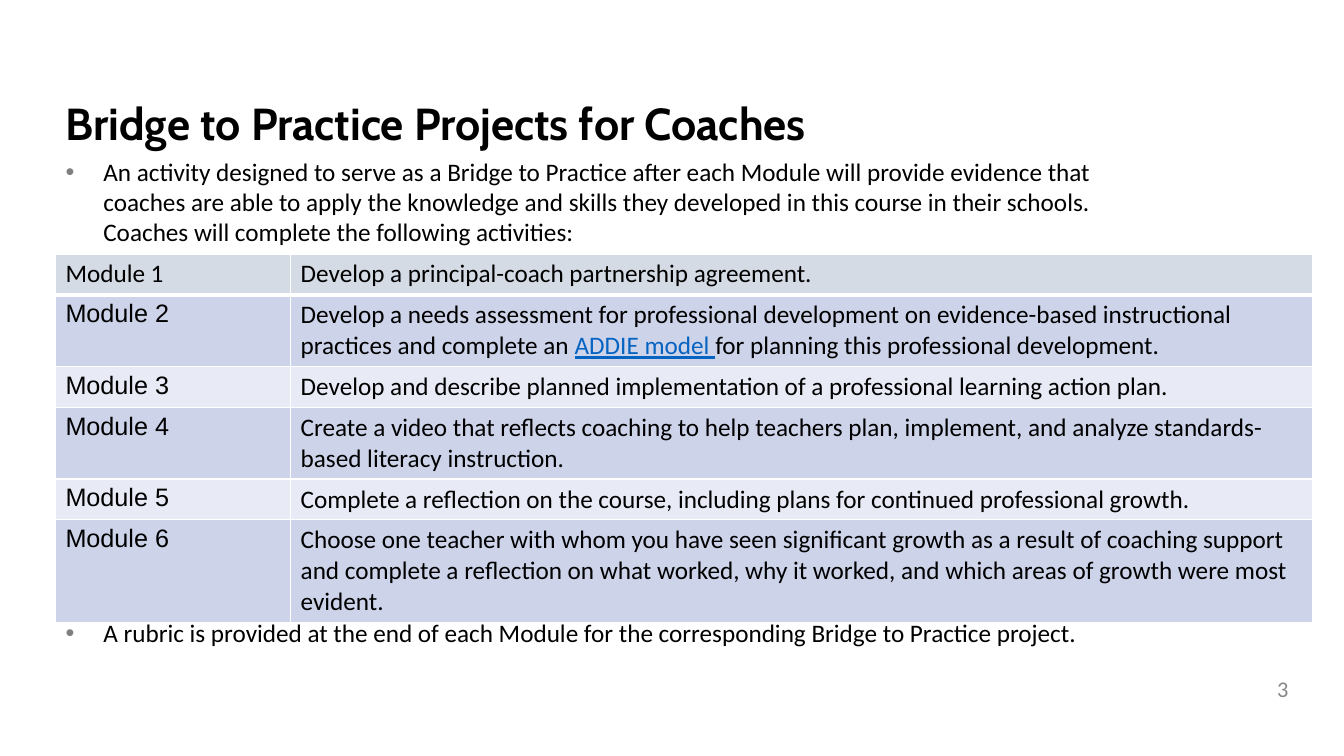
import pptx
import pptx.util
import pptx.dml.color
import pptx.enum.text
import pptx.oxml
import pptx.oxml.ns

Pt = pptx.util.Pt
RGB = pptx.dml.color.RGBColor
Align = pptx.enum.text.PP_ALIGN
Anchor = pptx.enum.text.MSO_ANCHOR
Fit = pptx.enum.text.MSO_AUTO_SIZE

BLACK = RGB(0x00, 0x00, 0x00)
WHITE = RGB(0xFF, 0xFF, 0xFF)
GREY = RGB(0x88, 0x88, 0x88)
DOT = RGB(0x7F, 0x7F, 0x7F)
LINK = RGB(0x05, 0x63, 0xC1)
HEAD = RGB(0xD5, 0xDB, 0xE5)
DARK = RGB(0xCD, 0xD4, 0xEA)
LIGHT = RGB(0xE8, 0xEB, 0xF5)

LEFT = 39.6
LINE = 21.95  # height of one 18 pt text line
PAD = 7.2     # top and bottom inset of a cell


class Deck:
    font = "Calibri"
    size = 18

    def __init__(self):
        self.prs = pptx.Presentation()
        self.prs.slide_width = Pt(960)
        self.prs.slide_height = Pt(540)
        self.slide = self.prs.slides.add_slide(self.prs.slide_layouts[1])

    def place(self, shape, x, y, w, h, anchor):
        shape.left, shape.top = Pt(x), Pt(y)
        shape.width, shape.height = Pt(w), Pt(h)
        frame = shape.text_frame
        frame.word_wrap = True
        frame.auto_size = Fit.NONE
        frame.vertical_anchor = anchor
        return frame

    def run(self, para, text, color=BLACK, size=None, font=None,
            bold=False, under=False):
        run = para.add_run()
        run.text = text
        face = run.font
        face.name = font or self.font
        face.size = Pt(size or self.size)
        face.color.rgb = color
        face.bold = bold
        face.underline = under

    def title(self, text, *box):
        frame = self.place(self.slide.shapes.title, *box, Anchor.MIDDLE)
        para = frame.paragraphs[0]
        para.alignment = Align.LEFT
        self.run(para, text, size=32, font="Cabin", bold=True)

    def bullet(self, para, indent):
        props = para._p.get_or_add_pPr()
        props.set("marL", str(Pt(indent)))
        props.set("indent", str(-Pt(indent)))
        ns = pptx.oxml.ns.nsdecls("a")
        for xml in (f'<a:buClr {ns}><a:srgbClr val="{DOT}"/></a:buClr>',
                    f'<a:buFont {ns} typeface="Arial"/>',
                    f'<a:buChar {ns} char="•"/>'):
            props.append(pptx.oxml.parse_xml(xml))

    def body(self, items, gap, *box):
        frame = self.place(self.slide.placeholders[1], *box, Anchor.TOP)
        for i, text in enumerate(items):
            para = frame.add_paragraph() if i else frame.paragraphs[0]
            self.bullet(para, 27)
            para.space_before = Pt(gap if i else 0)
            self.run(para, text)

    def number(self, text, *box):
        shape = self.slide.shapes.add_textbox(0, 0, 0, 0)
        para = self.place(shape, *box, Anchor.MIDDLE).paragraphs[0]
        para.alignment = Align.RIGHT
        self.run(para, text, GREY, size=16)

    def border(self, cell, **widths):
        props = cell._tc.get_or_add_tcPr()
        ns = pptx.oxml.ns.nsdecls("a")
        for side in "LRTB":
            props.append(pptx.oxml.parse_xml(
                f'<a:ln{side} {ns} w="{Pt(widths.get(side, 1))}"><a:solidFill>'
                f'<a:srgbClr val="{WHITE}"/></a:solidFill></a:ln{side}>'))

    def table(self, rows, widths, x, y):
        high = [PAD + lines * LINE for lines, _ in rows]
        grid = self.slide.shapes.add_table(
            len(rows), len(widths), Pt(x), Pt(y),
            Pt(sum(widths)), Pt(sum(high))).table
        for col, width in zip(grid.columns, widths):
            col.width = Pt(width)
        for i, (_, parts) in enumerate(rows):
            grid.rows[i].height = Pt(high[i])
            fill = (DARK if i % 2 else LIGHT) if i else HEAD
            edge = {0: {"B": 3}, 1: {"T": 3}}.get(i, {})
            for j in range(len(widths)):
                cell = grid.cell(i, j)
                self.border(cell, **edge)
                cell.fill.solid()
                cell.fill.fore_color.rgb = fill
            self.run(grid.cell(i, 0).text_frame.paragraphs[0],
                     f"Module {i + 1}", font="Arial" if i else None)
            para = grid.cell(i, 1).text_frame.paragraphs[0]
            for k, text in enumerate(parts):
                link = k == 1  # the middle part is styled as a link
                self.run(para, text, LINK if link else BLACK, under=link)


# Line count and text parts of each module
MODULES = [
    (1, ["Develop a principal-coach partnership agreement."]),
    (2, ["Develop a needs assessment for professional development on "
         "evidence-based instructional practices and complete an ",
         "ADDIE model ",
         "for planning this professional development."]),
    (1, ["Develop and describe planned implementation of a professional "
         "learning action plan."]),
    (2, ["Create a video that reflects coaching to help teachers plan, "
         "implement, and analyze standards-based literacy instruction."]),
    (1, ["Complete a reflection on the course, including plans for "
         "continued professional growth."]),
    (3, ["Choose one teacher with whom you have seen significant growth as a "
         "result of coaching support and complete a reflection on what "
         "worked, why it worked, and which areas of growth were most "
         "evident."]),
]

POINTS = [
    "An activity designed to serve as a Bridge to Practice after each Module "
    "will provide evidence that coaches are able to apply the knowledge and "
    "skills they developed in this course in their schools. Coaches will "
    "complete the following activities:",
    "A rubric is provided at the end of each Module for the corresponding "
    "Bridge to Practice project.",
]


def main():
    deck = Deck()
    # Page number and heading
    deck.number("3", 759.6, 481, 167.8, 21.6)
    deck.title("Bridge to Practice Projects for Coaches", LEFT, 54, 653, 67.7)
    # Points above and below the table
    deck.body(POINTS, 264.5, LEFT, 108, 766.8, 332)
    # Module activities
    deck.table(MODULES, [168, 730], LEFT, 181.4)
    deck.prs.save("out.pptx")


if __name__ == "__main__":
    main()
